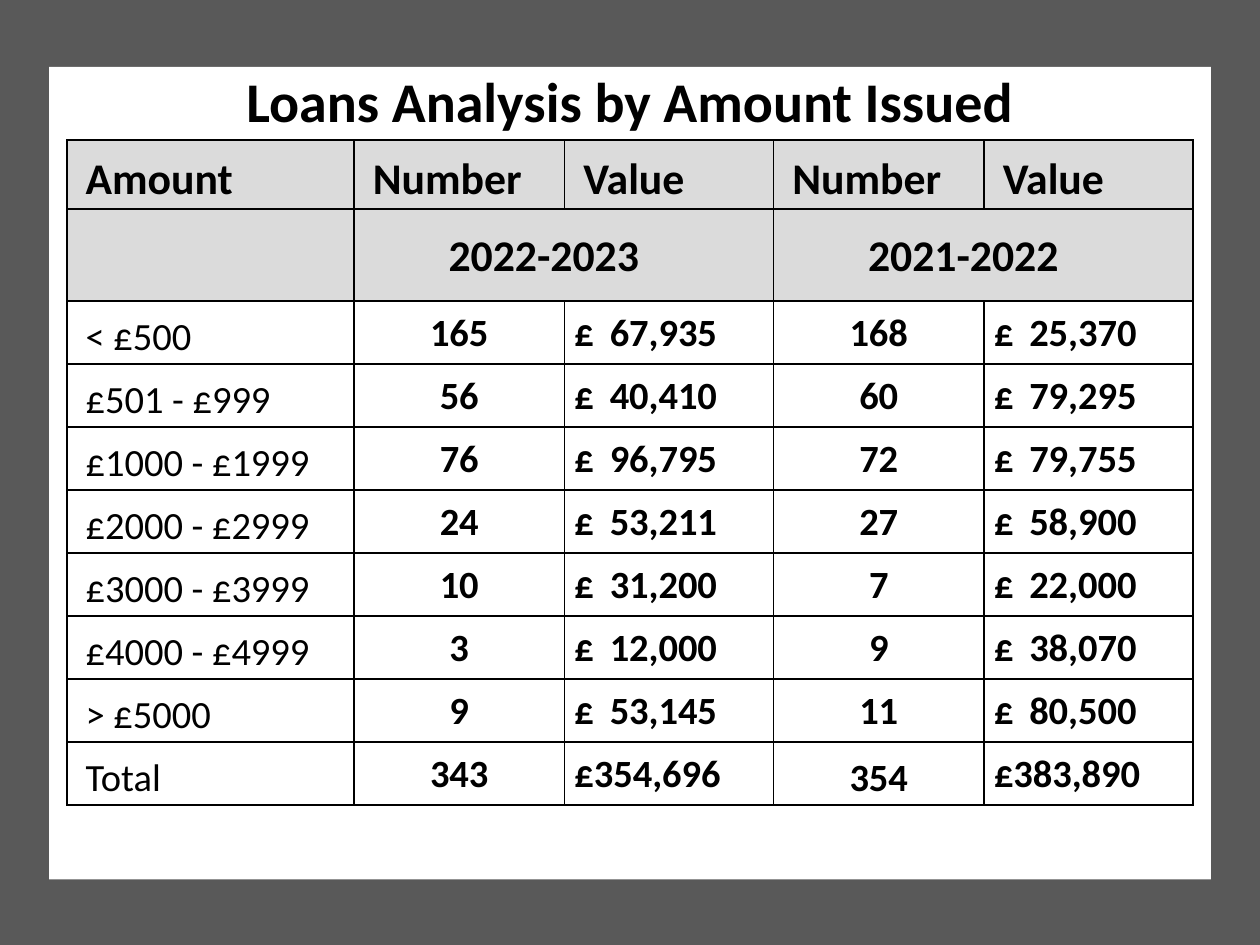
from lxml import etree
from pptx import Presentation
from pptx import util as u
from pptx.dml.color import RGBColor
from pptx.enum import shapes, text
from pptx.oxml import ns

FONT = "Calibri"
BLACK = RGBColor(0x00, 0x00, 0x00)
WHITE = RGBColor(0xFF, 0xFF, 0xFF)
FRAME_GREY = RGBColor(0x59, 0x59, 0x59)
HEADER_GREY = RGBColor(0xDB, 0xDB, 0xDB)

COLUMN_WIDTHS = [2.28, 1.67, 1.66, 1.67, 1.66]
ROW_HEIGHTS = [0.55, 0.73] + [0.5] * 8
HEADINGS = ["Amount", "Number", "Value", "Number", "Value"]
YEARS = {1: "2022-2023", 3: "2021-2022"}
LOANS = [
    ("< £500", "165", "£\t67,935", "168", "£\t25,370"),
    ("£501 - £999", "56", "£\t40,410", "60", "£\t79,295"),
    ("£1000 - £1999", "76", "£\t96,795", "72", "£\t79,755"),
    ("£2000 - £2999", "24", "£\t53,211", "27", "£\t58,900"),
    ("£3000 - £3999", "10", "£\t31,200", "7", "£\t22,000"),
    ("£4000 - £4999", "3", "£\t12,000", "9", "£\t38,070"),
    ("> £5000", "9", "£\t53,145", "11", "£\t80,500"),
    ("Total", "343", "£354,696", "354", "£383,890"),
]
LABEL_INSETS = (0.15, 0.02, 0.15, 0)
FIGURE_INSETS = (0.01, 0.01, 0.01, 0)
VALUE_INSETS = (0.08, 0.01, 0.01, 0)
YEAR_INSETS = (0.75, 0.1, 0.2, 0.1)
AMOUNT_TAB = 0.28


def write(frame, words, size=22, bold=True, align=text.PP_ALIGN.LEFT,
          spaced=False, tab=None):
    paragraph = frame.paragraphs[0]
    paragraph.text = words
    paragraph.alignment = align
    if spaced:
        paragraph.line_spacing = 1.15
        paragraph.space_after = u.Pt(10)
    if tab:
        stops = etree.SubElement(paragraph._p.get_or_add_pPr(), ns.qn("a:tabLst"))
        etree.SubElement(stops, ns.qn("a:tab"), pos=str(u.Inches(tab)), algn="l")
    for run in paragraph.runs:
        run.font.name = FONT
        run.font.size = u.Pt(size)
        run.font.bold = bold
        run.font.color.rgb = BLACK


def add_panel(slide, left, top, width, height, color):
    panel = slide.shapes.add_shape(
        shapes.MSO_SHAPE.RECTANGLE, *map(u.Inches, (left, top, width, height)))
    panel.shadow.inherit = False
    panel.fill.solid()
    panel.fill.fore_color.rgb = color
    panel.line.fill.background()


def add_borders(cell):
    properties = cell._tc.get_or_add_tcPr()
    for place, side in enumerate(("lnL", "lnR", "lnT", "lnB")):
        border = etree.Element(ns.qn(f"a:{side}"), w=str(u.Pt(1)))
        fill = etree.SubElement(border, ns.qn("a:solidFill"))
        etree.SubElement(fill, ns.qn("a:srgbClr"), val=str(BLACK))
        properties.insert(place, border)


def fill_cell(cell, words, insets, anchor=text.MSO_ANCHOR.MIDDLE, **style):
    (cell.margin_left, cell.margin_top,
     cell.margin_right, cell.margin_bottom) = map(u.Inches, insets)
    cell.vertical_anchor = anchor
    write(cell.text_frame, words, **style)


def fill_loan(table, row, loan):
    for column, words in enumerate(loan):
        cell = table.cell(row, column)
        if column == 0:
            fill_cell(cell, words, LABEL_INSETS, bold=False, spaced=True)
        elif column % 2:
            lowered = loan[0] == "Total" and column == 3
            fill_cell(cell, words, LABEL_INSETS if lowered else FIGURE_INSETS,
                      align=text.PP_ALIGN.CENTER, spaced=lowered)
        else:
            fill_cell(cell, words, VALUE_INSETS,
                      tab=AMOUNT_TAB if "\t" in words else None)


def add_loans_table(slide):
    table = slide.shapes.add_table(
        len(ROW_HEIGHTS), len(COLUMN_WIDTHS), u.Inches(0.53), u.Inches(1.11),
        u.Inches(sum(COLUMN_WIDTHS)), u.Inches(sum(ROW_HEIGHTS))).table
    table.first_row = table.horz_banding = False
    for column, width in zip(table.columns, COLUMN_WIDTHS):
        column.width = u.Inches(width)
    for index, (row, height) in enumerate(zip(table.rows, ROW_HEIGHTS)):
        row.height = u.Inches(height)
        for cell in row.cells:
            cell.fill.solid()
            cell.fill.fore_color.rgb = HEADER_GREY if index < 2 else WHITE
            add_borders(cell)
    for column, heading in enumerate(HEADINGS):
        fill_cell(table.cell(0, column), heading, LABEL_INSETS, size=25, spaced=True)
    for column, year in YEARS.items():
        table.cell(1, column).merge(table.cell(1, column + 1))
        fill_cell(table.cell(1, column), year, YEAR_INSETS,
                  anchor=text.MSO_ANCHOR.TOP, size=25, spaced=True)
    for row, loan in enumerate(LOANS, start=2):
        fill_loan(table, row, loan)


def place_title(slide, words):
    title = slide.shapes.title
    title.left, title.top, title.width, title.height = map(
        u.Inches, (1.56, 0.48, 6.88, 0.64))
    title.text_frame.vertical_anchor = text.MSO_ANCHOR.TOP
    title.text_frame.word_wrap = True
    title.text_frame.auto_size = text.MSO_AUTO_SIZE.SHAPE_TO_FIT_TEXT
    write(title.text_frame, words, size=32, align=text.PP_ALIGN.CENTER)
    slide.shapes._spTree.append(title._element)


def main():
    deck = Presentation()
    deck.slide_width, deck.slide_height = u.Inches(10), u.Inches(7.5)
    slide = deck.slides.add_slide(deck.slide_layouts.get_by_name("Title Only"))
    add_panel(slide, 0, 0, 10, 7.5, FRAME_GREY)
    add_panel(slide, 0.39, 0.53, 9.22, 6.45, WHITE)
    add_loans_table(slide)
    place_title(slide, "Loans Analysis by Amount Issued")
    deck.save("out.pptx")


if __name__ == "__main__":
    main()
